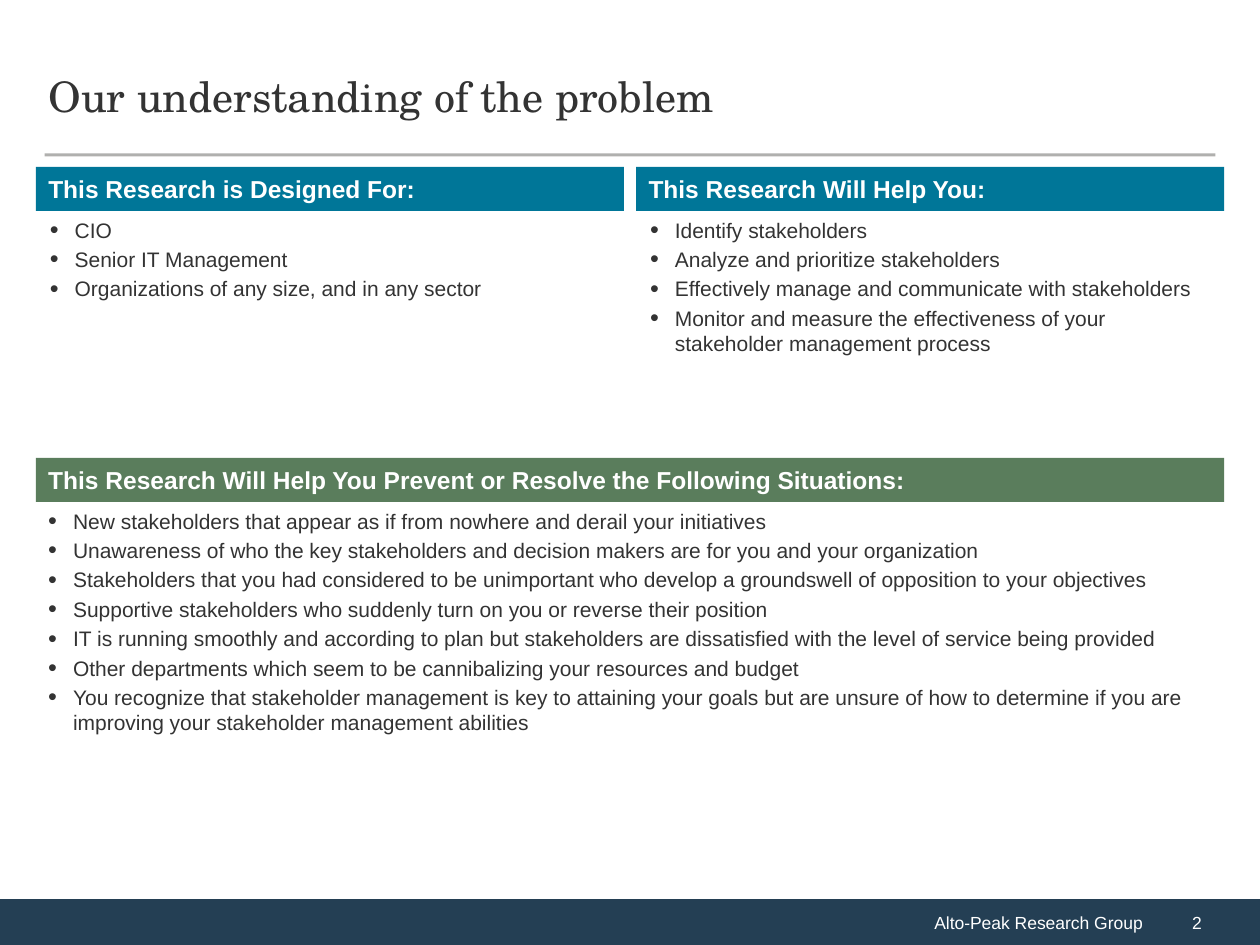
from dataclasses import dataclass

from lxml import etree
from pptx import Presentation
from pptx.dml.color import RGBColor
from pptx.enum.shapes import MSO_CONNECTOR, MSO_SHAPE
from pptx.enum.text import MSO_ANCHOR, MSO_AUTO_SIZE, PP_ALIGN
from pptx.oxml.ns import qn
from pptx.util import Pt

STRAIGHT = MSO_CONNECTOR.STRAIGHT
RECTANGLE = MSO_SHAPE.RECTANGLE
TOP, MIDDLE = MSO_ANCHOR.TOP, MSO_ANCHOR.MIDDLE
LEFT, RIGHT = PP_ALIGN.LEFT, PP_ALIGN.RIGHT
NO_AUTOFIT = MSO_AUTO_SIZE.NONE


@dataclass(frozen=True)
class Theme:
    text: str = "333333"
    light: str = "FFFFFF"
    blue: str = "007698"
    green: str = "5A7D5C"
    navy: str = "243F54"
    rule: str = "45433E"
    rule_opacity: int = 42
    body_font: str = "Arial"
    title_font: str = "TeX Gyre Schola"
    title_size: int = 24
    heading_size: int = 14
    body_size: int = 12
    footer_size: int = 10


def add_xml(parent, tag, **attributes):
    values = {key: str(value) for key, value in attributes.items()}
    return etree.SubElement(parent, qn(tag), values)


def write_text(frame, lines, *, size, color, font, bold=False, align=LEFT,
               anchor=MIDDLE, before=0, indent=0, bullet=None):
    frame.word_wrap = True
    frame.auto_size = NO_AUTOFIT
    frame.vertical_anchor = anchor
    for index, line in enumerate(lines):
        paragraph = frame.paragraphs[0] if index == 0 else frame.add_paragraph()
        paragraph.alignment = align
        paragraph.space_before = Pt(before)
        run = paragraph.add_run()
        run.text = line
        run.font.size = Pt(size)
        run.font.name = font
        run.font.bold = bold
        run.font.color.rgb = RGBColor.from_string(color)
        properties = paragraph._p.get_or_add_pPr()
        properties.set("marL", str(Pt(indent)))
        properties.set("indent", str(Pt(-indent if bullet else 0)))
        if bullet:
            add_xml(add_xml(properties, "a:buClr"), "a:srgbClr", val=color)
            add_xml(properties, "a:buSzPct", val=120000)
            add_xml(properties, "a:buFont", typeface=font)
            add_xml(properties, "a:buChar", char=bullet)


class SlideBuilder:
    def __init__(self, slide, theme):
        self.slide = slide
        self.theme = theme

    def title(self, text, left, top, width, height):
        title = self.slide.shapes.title
        title.left, title.top = Pt(left), Pt(top)
        title.width, title.height = Pt(width), Pt(height)
        write_text(title.text_frame, [text], size=self.theme.title_size,
                   color=self.theme.text, font=self.theme.title_font)

    def rule(self, left, right, top):
        rule = self.slide.shapes.add_connector(
            STRAIGHT, Pt(left), Pt(top), Pt(right), Pt(top))
        rule.line.width = Pt(1.75)
        rule.line.color.rgb = RGBColor.from_string(self.theme.rule)
        properties = rule._element.spPr
        color = properties.find(".//" + qn("a:srgbClr"))
        add_xml(color, "a:alpha", val=self.theme.rule_opacity * 1000)
        add_xml(properties, "a:effectLst")

    def band(self, text, left, top, width, height, fill, size, **text_format):
        band = self.slide.shapes.add_shape(
            RECTANGLE, Pt(left), Pt(top), Pt(width), Pt(height))
        band.shadow.inherit = False
        band.fill.solid()
        band.fill.fore_color.rgb = RGBColor.from_string(fill)
        band.line.fill.background()
        write_text(band.text_frame, [text], size=size, color=self.theme.light,
                   font=self.theme.body_font, **text_format)

    def bullets(self, items, left, top, width, height):
        box = self.slide.shapes.add_textbox(
            Pt(left), Pt(top), Pt(width), Pt(height))
        size = self.theme.body_size
        write_text(box.text_frame, items, size=size, color=self.theme.text,
                   font=self.theme.body_font, anchor=TOP, before=size * 0.2,
                   indent=14.2, bullet="•")

    def section(self, heading, items, left, top, width, height, fill, inset=0):
        heading_height = 25.2
        size = self.theme.heading_size
        self.band(heading, left, top, width, heading_height, fill, size,
                  bold=True, before=size * 0.2)
        self.bullets(items, left + inset, top + heading_height,
                     width - 2 * inset, height - heading_height)


def main():
    theme = Theme()
    presentation = Presentation()
    presentation.slide_width, presentation.slide_height = Pt(720), Pt(540)
    slide = presentation.slides.add_slide(presentation.slide_layouts[5])
    builder = SlideBuilder(slide, theme)

    footer_top, footer_height, footer_split = 513.8, 26.2, 660
    builder.band("Alto-Peak Research Group", 0, footer_top, footer_split,
                 footer_height, theme.navy, theme.footer_size,
                 align=RIGHT, indent=21)
    builder.band("2", footer_split, footer_top, 720 - footer_split,
                 footer_height, theme.navy, theme.footer_size, indent=14.2)
    builder.rule(25.5, 694.5, 88.5)
    builder.title("Our understanding of the problem", 20.5, 20, 679, 69)

    margin, gap = 20.5, 7
    full_width = 720 - 2 * margin
    column_width = (full_width - gap) / 2
    columns = [
        ("This Research is Designed For:", [
            "CIO",
            "Senior IT Management",
            "Organizations of any size, and in any sector",
        ]),
        ("This Research Will Help You:", [
            "Identify stakeholders",
            "Analyze and prioritize stakeholders",
            "Effectively manage and communicate with stakeholders",
            "Monitor and measure the effectiveness of your stakeholder management process",
        ]),
    ]
    for index, (heading, items) in enumerate(columns):
        builder.section(heading, items, margin + index * (column_width + gap),
                        95.3, column_width, 158.2, theme.blue, inset=0.9)

    situations = [
        "New stakeholders that appear as if from nowhere and derail your initiatives",
        "Unawareness of who the key stakeholders and decision makers are for you and your organization",
        "Stakeholders that you had considered to be unimportant who develop a groundswell of opposition to your objectives",
        "Supportive stakeholders who suddenly turn on you or reverse their position",
        "IT is running smoothly and according to plan but stakeholders are dissatisfied with the level of service being provided",
        "Other departments which seem to be cannibalizing your resources and budget",
        "You recognize that stakeholder management is key to attaining your goals but are unsure of how to determine if you are improving your stakeholder management abilities",
    ]
    builder.section(
        "This Research Will Help You Prevent or Resolve the Following Situations:",
        situations, margin, 261.6, full_width, 237.4, theme.green)

    presentation.save("out.pptx")


if __name__ == "__main__":
    main()
